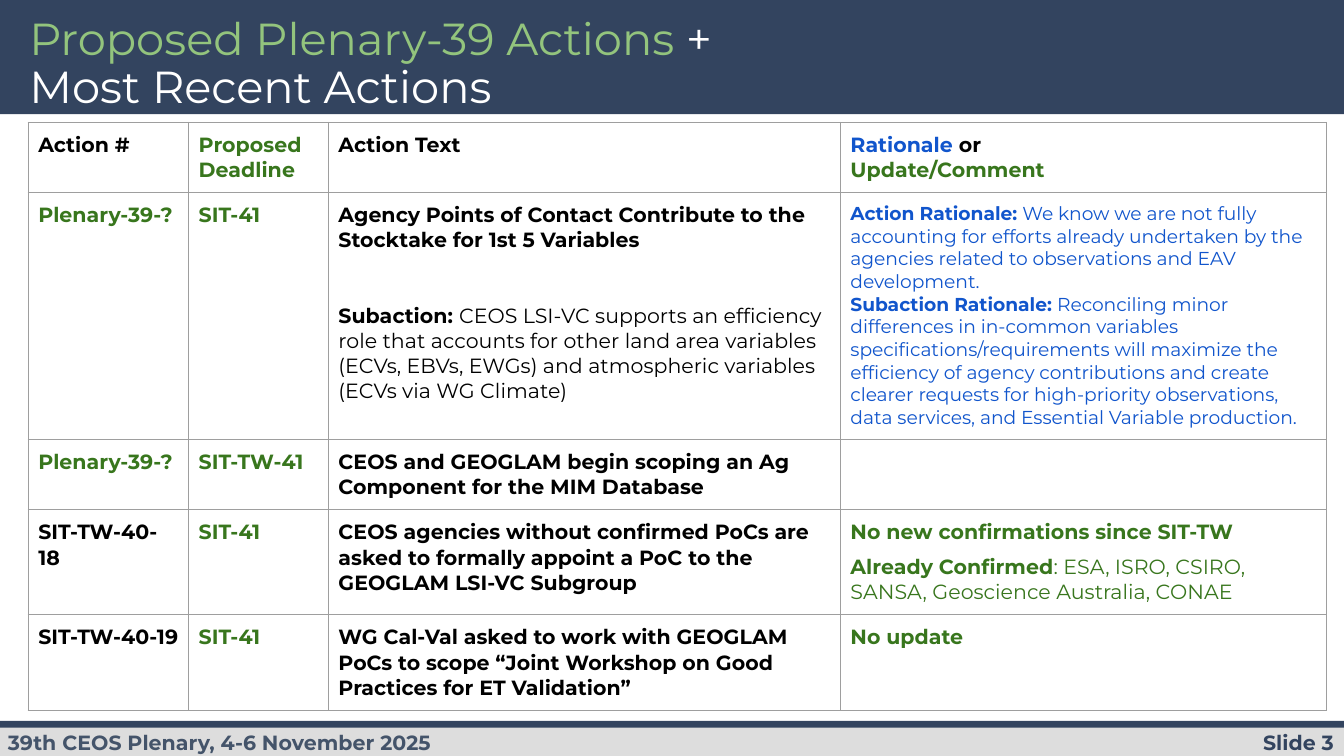
from dataclasses import dataclass

from lxml.etree import SubElement
from pptx import Presentation
from pptx.dml.color import RGBColor
from pptx.enum.shapes import MSO_SHAPE
from pptx.enum.text import MSO_ANCHOR, MSO_AUTO_SIZE, PP_ALIGN
from pptx.oxml.ns import qn
from pptx.util import Inches, Pt

COLORS = {
    "navy": "33445F", "slate": "44546A", "grey": "DDDDDD", "rule": "9E9E9E",
    "lime": "93C47D", "green": "38761D", "blue": "1155CC",
    "black": "000000", "white": "FFFFFF",
}
FONT = "Montserrat"
INSET = Pt(5.4)
COLUMNS = [11.94, 10.4, 38.1, 36.2]
ROWS = [9.26, 32.67, 9.26, 13.89, 12.57]

prs = Presentation()
prs.slide_width = Inches(10)
prs.slide_height = prs.slide_width * 9 // 16


@dataclass(frozen=True)
class Box:
    left: float
    top: float
    width: float
    height: float

    def emu(self) -> tuple:
        return across(self.left), down(self.top), across(self.width), down(self.height)


@dataclass(frozen=True)
class Run:
    text: str
    color: str = "black"
    bold: bool = True
    size: float = 11


@dataclass(frozen=True)
class Par:
    runs: tuple
    before: float = 0


def across(percent: float) -> int:
    return round(prs.slide_width * percent / 100)


def down(percent: float) -> int:
    return round(prs.slide_height * percent / 100)


def par(*runs: Run, before: float = 0) -> Par:
    return Par(runs, before)


def line(text: str, color: str = "black") -> list:
    return [par(Run(text, color))]


def add_run(p, run: Run) -> None:
    r = p.add_run()
    r.text = run.text
    r.font.name, r.font.size, r.font.bold = FONT, Pt(run.size), run.bold
    r.font.color.rgb = RGBColor.from_string(COLORS[run.color])


def write(tf, pars: list) -> None:
    for i, item in enumerate(pars):
        p = tf.add_paragraph() if i else tf.paragraphs[0]
        if item.before:
            p.space_before = Pt(item.before)
        for run in item.runs:
            add_run(p, run)


def set_insets(tf, side: int, top: int) -> None:
    tf.margin_left = tf.margin_right = side
    tf.margin_top = tf.margin_bottom = top


def add_band(slide, box: Box, color: str) -> None:
    s = slide.shapes.add_shape(MSO_SHAPE.RECTANGLE, *box.emu())
    s.shadow.inherit = False
    s.fill.solid()
    s.fill.fore_color.rgb = RGBColor.from_string(COLORS[color])
    s.line.fill.background()


def add_label(slide, box: Box, run: Run, align, side: int, top: int) -> None:
    tf = slide.shapes.add_textbox(*box.emu()).text_frame
    tf.word_wrap = True
    set_insets(tf, side, top)
    write(tf, [par(run)])
    tf.paragraphs[0].alignment = align


def add_title(slide, box: Box, first: list, second: Run) -> None:
    s = slide.shapes.title
    s.left, s.top, s.width, s.height = box.emu()
    tf = s.text_frame
    tf.word_wrap, tf.auto_size = True, MSO_AUTO_SIZE.NONE
    tf.vertical_anchor = MSO_ANCHOR.TOP
    set_insets(tf, INSET, Inches(0.04))
    p = tf.paragraphs[0]
    p.alignment, p.line_spacing = PP_ALIGN.LEFT, 0.9
    for run in first:
        add_run(p, run)
    p.add_line_break()
    SubElement(p._p.findall(qn("a:br"))[0], qn("a:rPr"), sz=str(second.size * 100))
    add_run(p, second)


def add_borders(cell) -> None:
    props = cell._tc.get_or_add_tcPr()
    for i, side in enumerate(("lnL", "lnR", "lnT", "lnB")):
        ln = props.makeelement(qn(f"a:{side}"), {"w": str(Pt(0.56))})
        fill = SubElement(ln, qn("a:solidFill"))
        SubElement(fill, qn("a:srgbClr"), val=COLORS["rule"])
        props.insert(i, ln)


def add_actions(slide, left: float, top: float, rows: list) -> None:
    box = Box(left, top, sum(COLUMNS), sum(ROWS))
    table = slide.shapes.add_table(len(ROWS), len(COLUMNS), *box.emu()).table
    table.first_row = table.horz_banding = False
    for column, width in zip(table.columns, COLUMNS):
        column.width = across(width)
    for row, height, contents in zip(table.rows, ROWS, rows):
        row.height = down(height)
        for cell, pars in zip(row.cells, contents):
            cell.fill.background()
            set_insets(cell, INSET, INSET)
            add_borders(cell)
            write(cell.text_frame, pars)


ACTIONS = [
    [line("Action #"), line("Proposed Deadline", "green"), line("Action Text"),
     [par(Run("Rationale", "blue"), Run(" or")), par(Run("Update/Comment", "green"))]],
    [line("Plenary-39-?", "green"), line("SIT-41", "green"),
     [par(Run("Agency Points of Contact Contribute to the Stocktake for 1st 5 Variables")),
      par(Run("Subaction: "),
          Run("CEOS LSI-VC supports an efficiency role that accounts for other land area "
              "variables (ECVs, EBVs, EWGs) and atmospheric variables "
              "(ECVs via WG Climate)", bold=False), before=27)],
     [par(Run("Action Rationale: ", "blue", size=10),
          Run("We know we are not fully accounting for efforts already undertaken by the "
              "agencies related to observations and EAV development.", "blue", False, 10)),
      par(Run("Subaction Rationale: ", "blue", size=10),
          Run("Reconciling minor differences in in-common variables "
              "specifications/requirements will maximize the efficiency of agency "
              "contributions and create clearer requests for high-priority observations, "
              "data services, and Essential Variable production.", "blue", False, 10))]],
    [line("Plenary-39-?", "green"), line("SIT-TW-41", "green"),
     line("CEOS and GEOGLAM begin scoping an Ag Component for the MIM Database"), []],
    [line("SIT-TW-40-18"), line("SIT-41", "green"),
     line("CEOS agencies without confirmed PoCs are asked to formally appoint a PoC "
          "to the GEOGLAM LSI-VC Subgroup"),
     [par(Run("No new confirmations since SIT-TW", "green")),
      par(Run("Already Confirmed", "green"),
          Run(": ESA, ISRO, CSIRO, SANSA, Geoscience Australia, CONAE", "green", False),
          before=5)]],
    [line("SIT-TW-40-19"), line("SIT-41", "green"),
     line("WG Cal-Val asked to work with GEOGLAM PoCs to scope “Joint Workshop on Good "
          "Practices for ET Validation”"),
     line("No update", "green")],
]


def main() -> None:
    slide = prs.slides.add_slide(prs.slide_layouts[5])
    add_band(slide, Box(0, 0, 100, 15.1), "navy")
    add_band(slide, Box(0, 95.9, 100, 4.1), "grey")
    add_band(slide, Box(0, 95.37, 100, 0.89), "navy")
    add_label(slide, Box(84.2, 95.85, 15.8, 4.63), Run("Slide 3", "navy"),
              PP_ALIGN.RIGHT, INSET, Inches(0.04))
    add_label(slide, Box(-0.4, 94.9, 38.2, 6.94),
              Run("39th CEOS Plenary, 4-6 November 2025", "slate"),
              PP_ALIGN.LEFT, Inches(0.1), Inches(0.1))
    title = slide.shapes.title._element
    title.getparent().append(title)
    add_title(slide, Box(1.43, 1.5, 77, 11.39),
              [Run("Proposed Plenary-39 Actions", "lime", False, 24),
               Run(" + ", "white", False, 24)],
              Run("Most Recent Actions", "white", False, 24))
    add_actions(slide, 2.1, 16.19, ACTIONS)
    prs.save("out.pptx")


if __name__ == "__main__":
    main()
